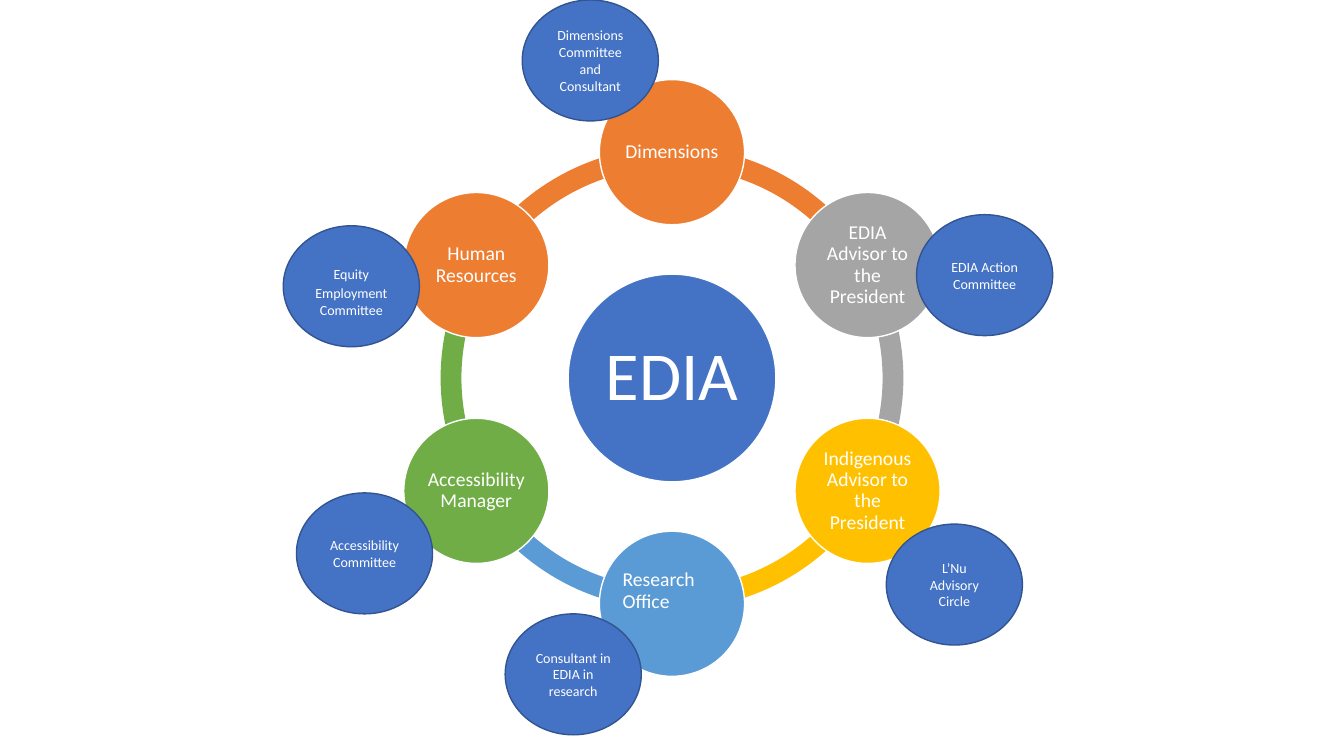
import math

from pptx import Presentation, util as u
from pptx.dml.color import RGBColor
from pptx.enum import shapes, text

BLUE, NAVY, WHITE = "4472C4", "325491", "FFFFFF"
ORANGE, GREY, GOLD, SKY, GREEN = "ED7D31", "A5A5A5", "FFC000", "5B9BD5", "70AD47"


def rgb(value):
    return RGBColor.from_string(value)


class Diagram:
    """Centres are percents of slide width and height; sizes are percents of height."""

    font = "Calibri"
    ring_radius = 29.87
    ring_size = 61.2
    node_size = 19.2
    hub_size = 27.47
    committee_size = (18, 16)

    def __init__(self, prs):
        self.width, self.height = prs.slide_width, prs.slide_height
        self.slide = prs.slides.add_slide(prs.slide_layouts[6])

    def shape(self, kind, cx, cy, w, h, fill, line=None):
        w, h = self.height * w / 100, self.height * h / 100
        left = self.width * cx / 100 - w / 2
        top = self.height * cy / 100 - h / 2
        sp = self.slide.shapes.add_shape(kind, *(u.Emu(round(v)) for v in (left, top, w, h)))
        sp.shadow.inherit = False
        sp.fill.solid()
        sp.fill.fore_color.rgb = rgb(fill)
        if line:
            sp.line.color.rgb = rgb(line)
            sp.line.width = u.Pt(1)
        else:
            sp.line.fill.background()
        return sp

    def label(self, sp, runs, align=text.PP_ALIGN.CENTER, spacing=1.0, inset=None):
        tf = sp.text_frame
        tf.word_wrap = True
        tf.vertical_anchor = text.MSO_ANCHOR.MIDDLE
        if inset is not None:
            tf.margin_left = tf.margin_right = tf.margin_top = tf.margin_bottom = u.Inches(inset)
        p = tf.paragraphs[0]
        p.alignment = align
        p.line_spacing = spacing
        for words, size in runs:
            r = p.add_run()
            r.text = words
            r.font.name = self.font
            r.font.size = u.Pt(size)
            r.font.color.rgb = rgb(WHITE)
        return tf

    def arc(self, start, fill):
        sp = self.shape(shapes.MSO_SHAPE.BLOCK_ARC, 50, 50, self.ring_size, self.ring_size, fill)
        # An adjustment of 1 is 100000 units, and a degree is 60000 units
        sp.adjustments[0] = start * 0.6
        sp.adjustments[1] = (start + 60) % 360 * 0.6
        sp.adjustments[2] = 0.045

    def hub(self, title):
        sp = self.shape(shapes.MSO_SHAPE.OVAL, 50, 50, self.hub_size, self.hub_size, BLUE, WHITE)
        self.label(sp, [(title, 49)], spacing=0.9, inset=0.07)

    def node(self, angle, title, fill, align=text.PP_ALIGN.CENTER, lift=0):
        a = math.radians(angle)
        cx = 50 + self.ring_radius * math.cos(a) * self.height / self.width
        cy = 50 + self.ring_radius * math.sin(a)
        sp = self.shape(shapes.MSO_SHAPE.OVAL, cx, cy, self.node_size, self.node_size, fill, WHITE)
        tf = self.label(sp, [(title, 14)], align, 0.9, 0.02)
        tf.margin_bottom += u.Inches(lift)

    def committee(self, cx, cy, *runs):
        sp = self.shape(shapes.MSO_SHAPE.OVAL, cx, cy, *self.committee_size, BLUE, NAVY)
        self.label(sp, runs)


def main():
    prs = Presentation()
    prs.slide_width, prs.slide_height = u.Inches(13.33), u.Inches(7.5)
    s = Diagram(prs)

    # Offices clockwise from the top, 60 degrees apart
    offices = [
        ("Dimensions", ORANGE),
        ("EDIA Advisor to the President", GREY),
        ("Indigenous Advisor to the President", GOLD),
        ("Research Office", SKY),
        ("Accessibility Manager", GREEN),
        ("Human Resources", ORANGE),
    ]
    angles = [(270 + 60 * i) % 360 for i in range(len(offices))]

    # Ring: each arc takes the colour of the office it starts from
    for angle, (_, fill) in zip(angles, offices):
        s.arc(angle, fill)

    # Hub and offices
    s.hub("EDIA")
    for angle, (title, fill) in zip(angles, offices):
        if title == "Research Office":
            s.node(angle, title, fill, text.PP_ALIGN.LEFT, lift=0.25)
        else:
            s.node(angle, title, fill)

    # Committees beside their offices
    s.committee(43.92, 8, ("Dimensions Committee and Consultant", 10))
    s.committee(26.14, 37.87, ("Equity", 10), (" ", 18), ("Employment Committee", 10))
    s.committee(73.26, 36.4, ("EDIA Action Committee", 10))
    s.committee(71.01, 77.33, ("L’Nu Advisory Circle", 10))
    s.committee(42.65, 89.2, ("Consultant in EDIA in research", 10))
    s.committee(27.12, 73.2, ("Accessibility Committee", 10))

    prs.save("out.pptx")


if __name__ == "__main__":
    main()
